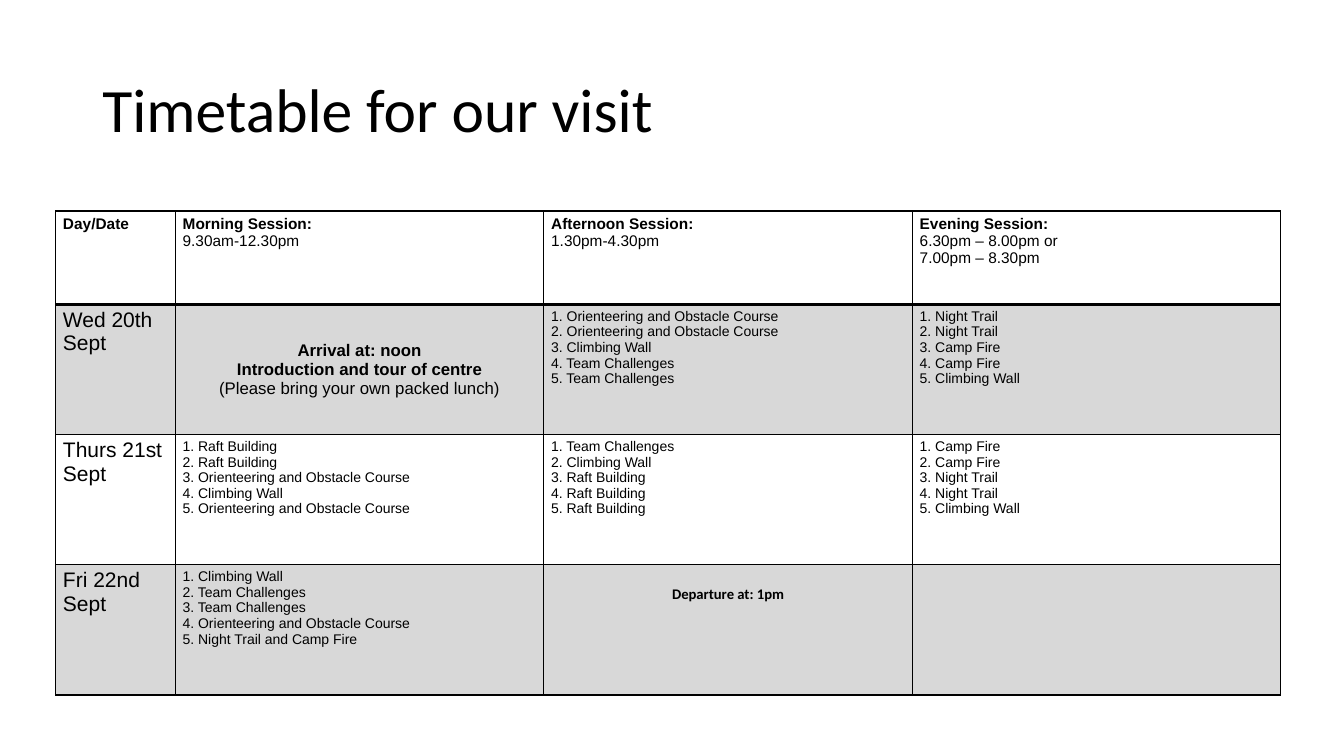
from lxml.etree import SubElement
from pptx import Presentation
from pptx.dml.color import RGBColor
from pptx.enum.text import MSO_ANCHOR as Anchor, PP_ALIGN as Align
from pptx.oxml.ns import qn
from pptx.util import Emu, Pt

PX = 9525
BLACK, GREY = "000000", "D8D8D8"
COLUMN_WIDTHS = [114, 351, 351, 351]
ROW_HEIGHTS = [89, 124, 124, 124]
HEADINGS = [
    ["Day/Date"],
    ["Morning Session:", "9.30am-12.30pm"],
    ["Afternoon Session:", "1.30pm-4.30pm"],
    ["Evening Session:", "6.30pm – 8.00pm or", "7.00pm – 8.30pm"],
]
DAYS = ["Wed 20th Sept", "Thurs 21st Sept", "Fri 22nd Sept"]
RAFT, WALL, TEAM = "Raft Building", "Climbing Wall", "Team Challenges"
COURSE, TRAIL, FIRE = "Orienteering and Obstacle Course", "Night Trail", "Camp Fire"
ACTIVITIES = {
    (1, 2): [COURSE, COURSE, WALL, TEAM, TEAM],
    (1, 3): [TRAIL, TRAIL, FIRE, FIRE, WALL],
    (2, 1): [RAFT, RAFT, COURSE, WALL, COURSE],
    (2, 2): [TEAM, WALL, RAFT, RAFT, RAFT],
    (2, 3): [FIRE, FIRE, TRAIL, TRAIL, WALL],
    (3, 1): [WALL, TEAM, TEAM, COURSE, "Night Trail and Camp Fire"],
}
ARRIVAL = [
    "Arrival at: noon",
    "Introduction and tour of centre",
    "(Please bring your own packed lunch)",
]


def px(length):
    """Turn a length in px into EMU."""
    return Emu(length * PX)


def color(value):
    """Turn a hex string into a colour."""
    return RGBColor.from_string(value)


def write(frame, lines, size, bold_lines=0, align=Align.LEFT, font="Arial"):
    """Write lines as paragraphs, the first bold_lines of them bold."""
    for index, line in enumerate(lines):
        paragraph = frame.add_paragraph() if index else frame.paragraphs[0]
        paragraph.text = line
        paragraph.alignment = align
        paragraph.font.name = font
        paragraph.font.size = Pt(size)
        paragraph.font.bold = index < bold_lines
        paragraph.font.color.rgb = color(BLACK)


def set_borders(cell, top, bottom):
    """Draw black cell borders, with top and bottom widths in points."""
    properties = cell._tc.get_or_add_tcPr()
    for side, width in (("L", 1), ("R", 1), ("T", top), ("B", bottom)):
        border = SubElement(properties, qn(f"a:ln{side}"), w=str(Pt(width)))
        fill = SubElement(border, qn("a:solidFill"))
        SubElement(fill, qn("a:srgbClr"), val=BLACK)


def format_cell(cell, row):
    """Set the margins, borders and fill that a cell has in its row."""
    cell.margin_left = cell.margin_right = px(7)
    cell.margin_top = cell.margin_bottom = px(4)
    set_borders(cell, 2 if row == 1 else 1, 2 if row == 0 else 1)
    if row % 2:
        cell.fill.solid()
        cell.fill.fore_color.rgb = color(GREY)
    else:
        cell.fill.background()


def add_title(slide, text):
    """Add the slide title."""
    title = slide.shapes.add_textbox(px(88), px(38), px(1104), px(139))
    frame = title.text_frame
    frame.word_wrap = True
    frame.vertical_anchor = Anchor.MIDDLE
    write(frame, [text], 44, font="Calibri")
    frame.paragraphs[0].line_spacing = 0.9


def add_grid(slide):
    """Add the empty timetable grid and return its table."""
    grid = slide.shapes.add_table(
        len(ROW_HEIGHTS), len(COLUMN_WIDTHS), px(53), px(201),
        px(sum(COLUMN_WIDTHS)), px(sum(ROW_HEIGHTS))).table
    grid.first_row = grid.horz_banding = False
    for column, width in zip(grid.columns, COLUMN_WIDTHS):
        column.width = px(width)
    for index, (row, height) in enumerate(zip(grid.rows, ROW_HEIGHTS)):
        row.height = px(height)
        for cell in row.cells:
            format_cell(cell, index)
    return grid


def fill_timetable(timetable):
    """Write the headings, days, activities, arrival and departure."""
    for column, heading in enumerate(HEADINGS):
        write(timetable.cell(0, column).text_frame, heading, 11, bold_lines=1)
    for row, day in enumerate(DAYS, 1):
        write(timetable.cell(row, 0).text_frame, [day], 15)
    for (row, column), activities in ACTIVITIES.items():
        numbered = [f"{group}. {name}" for group, name in enumerate(activities, 1)]
        write(timetable.cell(row, column).text_frame, numbered, 10)
    arrival = timetable.cell(1, 1)
    arrival.vertical_anchor = Anchor.MIDDLE
    write(arrival.text_frame, ARRIVAL, 12, 2, Align.CENTER)
    departure = timetable.cell(3, 2)
    departure.margin_top = px(20)
    write(departure.text_frame, ["Departure at: 1pm"], 10.5, 1, Align.CENTER, "Calibri")


def main():
    """Build the timetable slide and save it."""
    deck = Presentation()
    deck.slide_width, deck.slide_height = px(1280), px(720)
    slide = deck.slides.add_slide(deck.slide_layouts[6])
    add_title(slide, "Timetable for our visit")
    fill_timetable(add_grid(slide))
    deck.save("out.pptx")


if __name__ == "__main__":
    main()
